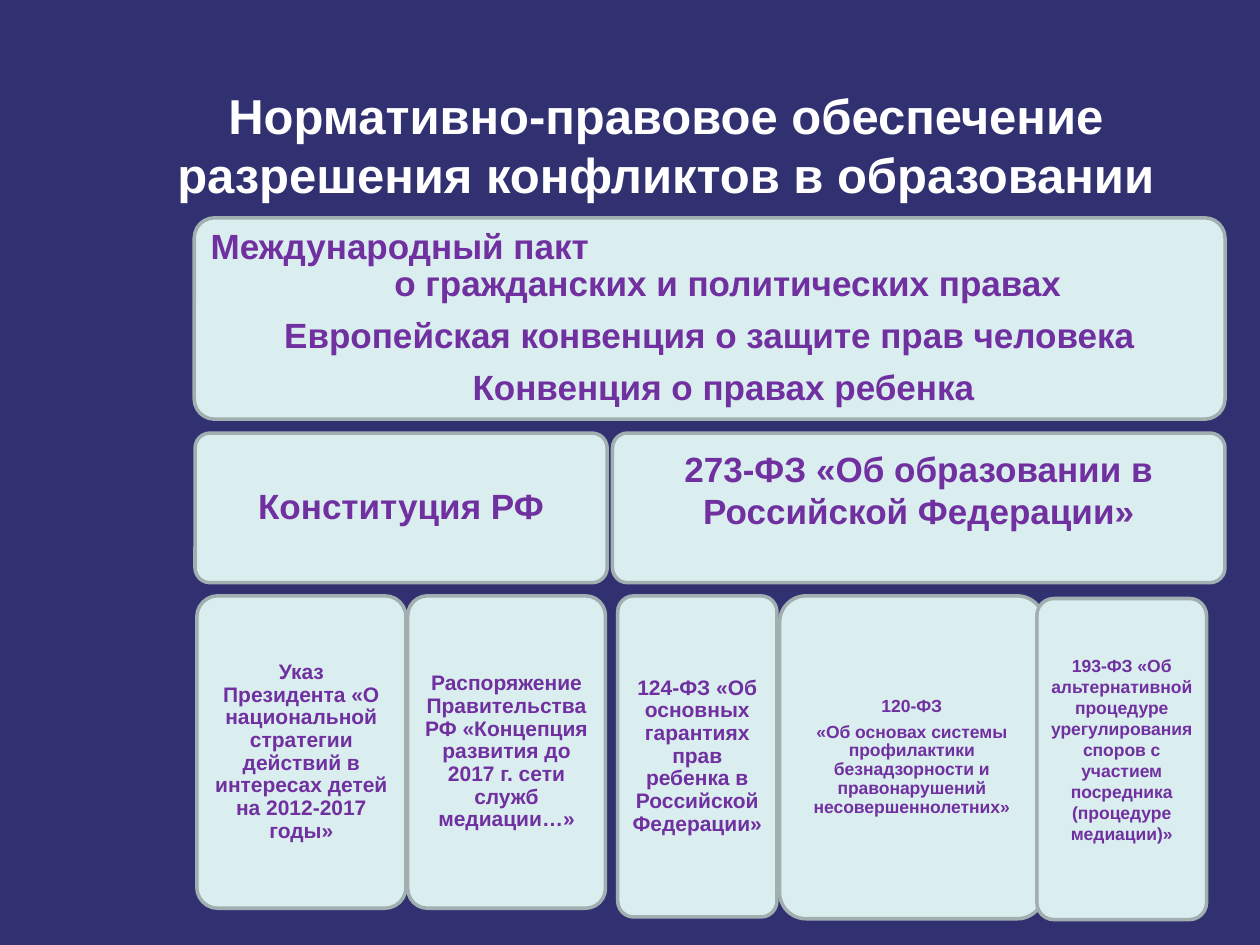
from dataclasses import dataclass

import pptx
import pptx.dml.color
import pptx.enum.shapes
import pptx.enum.text
import pptx.util

Pt = pptx.util.Pt
Align = pptx.enum.text.PP_ALIGN


def rgb(code):
    return pptx.dml.color.RGBColor.from_string(code)


@dataclass(frozen=True)
class Theme:
    font: str = "Arial"
    back: str = "313172"
    head: str = "FFFFFF"
    text: str = "7030A0"
    fill: str = "DAEDEF"
    edge: str = "A1AFB1"
    title: int = 28
    large: int = 20
    small: int = 12
    tiny: int = 10


THEME = Theme()

# Lower row: left, top, width, height, text, type size, line spacing, lift
ACTS = [
    (112.5, 340.5, 119.5, 178.5, "Указ\vПрезидента «О национальной стратегии действий "
     "в интересах детей на 2012-2017 годы»", THEME.small, 0.9, 0),
    (233, 340.5, 113, 178.5, "Распоряжение Правительства РФ «Концепция развития "
     "до 2017 г. сети служб медиации…»", THEME.small, 0.9, 0),
    (353, 340.5, 91, 183.5, "124-ФЗ «Об основных гарантиях прав ребенка "
     "в Российской Федерации»", THEME.small, 0.9, 0),
    (445.5, 340.5, 151, 184.5, "120-ФЗ\n«Об основах системы профилактики "
     "безнадзорности и правонарушений несовершеннолетних»", THEME.tiny, 0.9, 0),
    (592.5, 342, 97, 183.5, "193-ФЗ «Об альтернативной процедуре урегулирования "
     "споров с участием посредника (процедуре медиации)»", THEME.tiny, 1, 11),
]


def style(frame, size, color):
    """Centre the text and format every run."""
    frame.word_wrap = True
    frame.auto_size = pptx.enum.text.MSO_AUTO_SIZE.NONE
    frame.vertical_anchor = pptx.enum.text.MSO_ANCHOR.MIDDLE
    for para in frame.paragraphs:
        para.alignment = Align.CENTER
        for run in para.runs:
            run.font.name = THEME.font
            run.font.size = Pt(size)
            run.font.bold = True
            run.font.color.rgb = rgb(color)


def add_title(slide, text):
    title = slide.shapes.title
    title.left, title.top = Pt(60), Pt(43)
    title.width, title.height = Pt(641), Pt(79)
    title.text_frame.text = text
    style(title.text_frame, THEME.title, THEME.head)


def add_card(slide, left, top, width, height, text, size, space=0.9, lift=0):
    """Add a rounded card; lift raises its text by a deeper bottom margin."""
    card = slide.shapes.add_shape(
        pptx.enum.shapes.MSO_SHAPE.ROUNDED_RECTANGLE,
        Pt(left), Pt(top), Pt(width), Pt(height))
    card.adjustments[0] = 0.1
    card.shadow.inherit = False
    card.fill.solid()
    card.fill.fore_color.rgb = rgb(THEME.fill)
    card.line.color.rgb = rgb(THEME.edge)
    card.line.width = Pt(2)

    frame = card.text_frame
    frame.text = text
    style(frame, size, THEME.text)
    inset = size * 0.3
    frame.margin_left = frame.margin_right = frame.margin_top = Pt(inset)
    frame.margin_bottom = Pt(inset + lift)
    for para in frame.paragraphs:
        para.line_spacing = space
    for para in frame.paragraphs[:-1]:
        para.space_after = Pt(size * 0.4)
    return card


def indent(para, points):
    para._p.get_or_add_pPr().set("marL", str(Pt(points)))


def main():
    deck = pptx.Presentation()
    deck.slide_width, deck.slide_height = Pt(720), Pt(540)
    slide = deck.slides.add_slide(deck.slide_layouts[5])
    slide.background.fill.solid()
    slide.background.fill.fore_color.rgb = rgb(THEME.back)
    add_title(slide, "Нормативно-правовое обеспечение разрешения "
                     "конфликтов в образовании")

    # World treaties
    pact = add_card(slide, 111, 124.5, 589, 115,
                    "Международный пакт\n"
                    "о гражданских и политических правах\n"
                    "Европейская конвенция о защите прав человека\n"
                    "Конвенция о правах ребенка", THEME.large)
    lines = pact.text_frame.paragraphs
    lines[0].alignment = Align.LEFT
    lines[0].space_after = Pt(0)
    indent(lines[1], 21)
    indent(lines[3], 16)

    # Main laws
    add_card(slide, 111.5, 247.5, 235.5, 85.5, "Конституция РФ", THEME.large)
    add_card(slide, 350, 247.5, 350, 85.5,
             "273-ФЗ «Об образовании в Российской Федерации»",
             THEME.large, space=1, lift=21)

    # Decrees and other acts
    for act in ACTS:
        add_card(slide, *act)

    deck.save("out.pptx")


if __name__ == "__main__":
    main()
